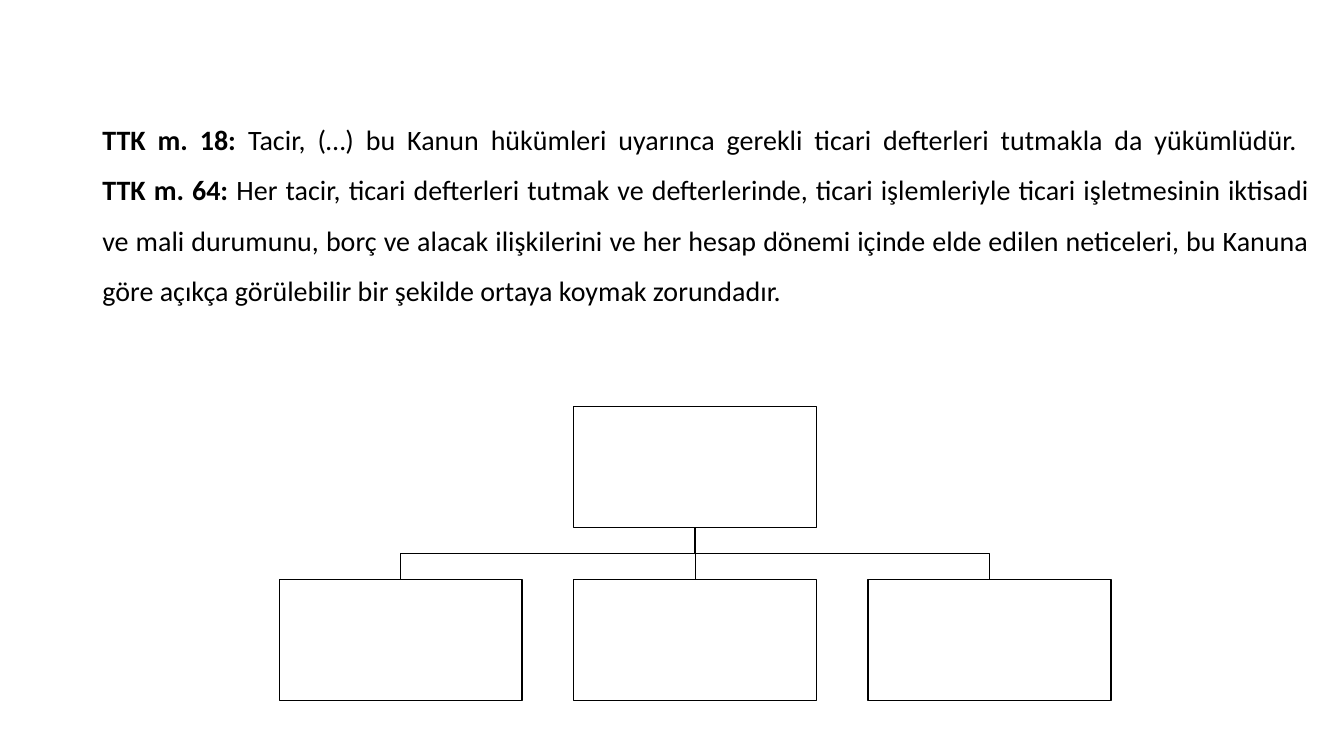
from lxml.etree import SubElement
from pptx import Presentation
from pptx.dml.color import RGBColor
from pptx.enum.shapes import MSO_CONNECTOR, MSO_SHAPE
from pptx.enum.text import MSO_ANCHOR, PP_ALIGN
from pptx.oxml.ns import qn
from pptx.util import Cm, Pt

BLACK = RGBColor(0x00, 0x00, 0x00)
WHITE = RGBColor(0xFF, 0xFF, 0xFF)
FONT = "Calibri"
LINE_WIDTH = Pt(1)
BRANCHES = 3

ARTICLES = [
    ("TTK m. 18: ",
     "Tacir, (…) bu Kanun hükümleri uyarınca gerekli ticari defterleri "
     "tutmakla da yükümlüdür. "),
    ("TTK m. 64: ",
     "Her tacir, ticari defterleri tutmak ve defterlerinde, ticari "
     "işlemleriyle ticari işletmesinin iktisadi ve mali durumunu, borç ve "
     "alacak ilişkilerini ve her hesap dönemi içinde elde edilen neticeleri, "
     "bu Kanuna göre açıkça görülebilir bir şekilde ortaya koymak "
     "zorundadır."),
]


def add_span(para, text, bold):
    span = para.add_run()
    span.text = text
    span.font.name = FONT
    span.font.size = Pt(20)
    span.font.bold = bold
    span.font.color.rgb = BLACK


def add_articles(page, left, top, width, height):
    """Set the law articles as one justified paragraph, a line break apart."""
    frame = page.shapes.add_textbox(left, top, width, height).text_frame
    frame.word_wrap = True
    frame.vertical_anchor = MSO_ANCHOR.MIDDLE
    para = frame.paragraphs[0]
    para.alignment = PP_ALIGN.JUSTIFY
    para.line_spacing = 1.5
    for index, (label, wording) in enumerate(ARTICLES):
        if index:
            para.add_line_break()
        add_span(para, label, True)
        add_span(para, wording, False)


def set_outline(shape):
    shape.line.color.rgb = BLACK
    shape.line.width = LINE_WIDTH


def add_box(page, left, top, width, height):
    box = page.shapes.add_shape(MSO_SHAPE.RECTANGLE, left, top, width, height)
    box.shadow.inherit = False
    box.fill.solid()
    box.fill.fore_color.rgb = WHITE
    set_outline(box)


def add_branch(page, start_x, start_y, end_x, end_y):
    """Join two boxes: straight when aligned, else with a bend halfway."""
    if start_x == end_x:
        branch = page.shapes.add_connector(
            MSO_CONNECTOR.STRAIGHT, start_x, start_y, end_x, end_y)
        SubElement(branch.line._get_or_add_ln().getparent(), qn("a:effectLst"))
    else:
        middle_y = (start_y + end_y) // 2
        builder = page.shapes.build_freeform(start_x, start_y)
        builder.add_line_segments(
            [(start_x, middle_y), (end_x, middle_y), (end_x, end_y)],
            close=False)
        branch = builder.convert_to_shape()
        branch.shadow.inherit = False
        branch.fill.background()
    set_outline(branch)


def add_hierarchy(page, left, top, width, height, gap):
    """Place one box above a row of boxes and join them."""
    box_width = (width - (BRANCHES - 1) * gap) // BRANCHES
    box_height = (height - gap) // 2
    row_top = top + box_height + gap
    root_left = left + (width - box_width) // 2
    row = [left + index * (box_width + gap) for index in range(BRANCHES)]
    half = box_width // 2
    for box_left in row:
        add_branch(page, root_left + half, top + box_height,
                   box_left + half, row_top)
    add_box(page, root_left, top, box_width, box_height)
    for box_left in row:
        add_box(page, box_left, row_top, box_width, box_height)


def main():
    deck = Presentation()
    deck.slide_width, deck.slide_height = Cm(33.87), Cm(19.05)
    page = deck.slides.add_slide(deck.slide_layouts[6])
    add_articles(page, Cm(2.33), Cm(1.1), Cm(30.92), Cm(8.2))
    add_hierarchy(page, Cm(7.04), Cm(10.24), Cm(20.96), Cm(7.42), Cm(1.3))
    deck.save("out.pptx")


if __name__ == "__main__":
    main()
